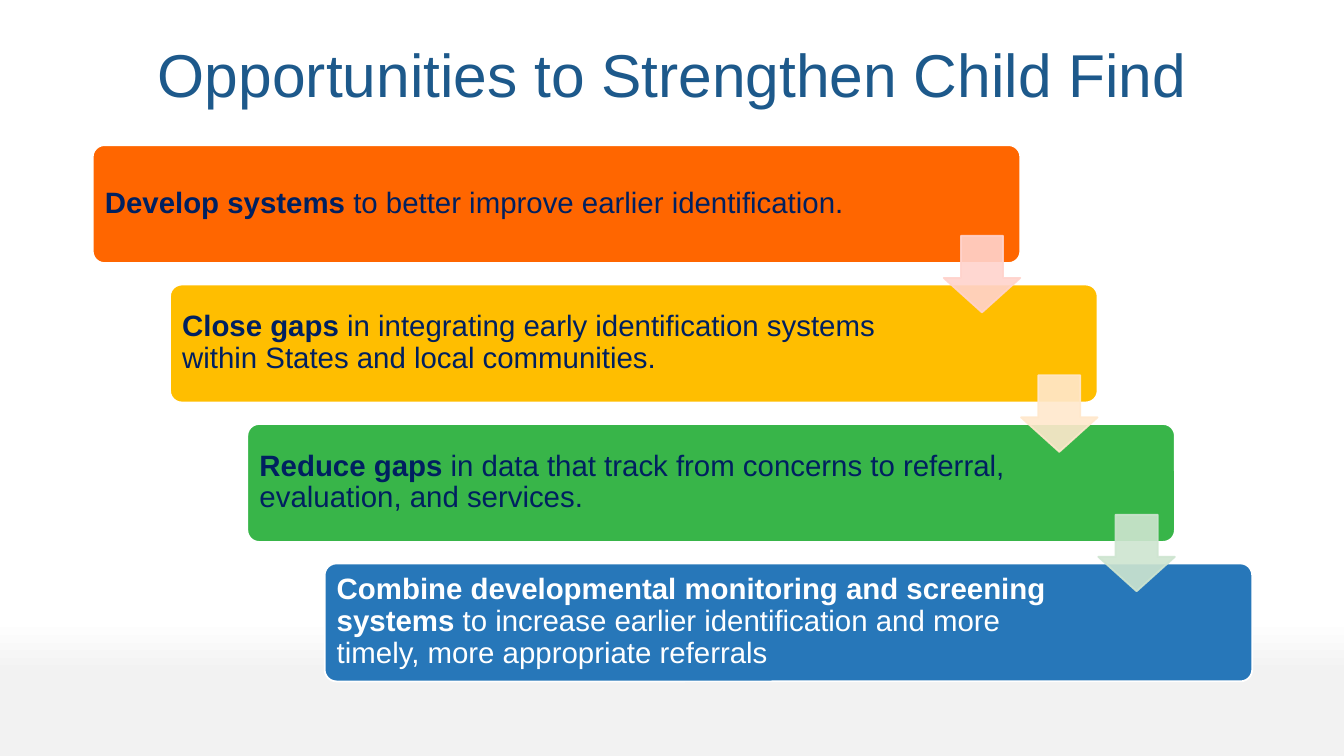
from lxml.etree import SubElement
from pptx import Presentation
from pptx.dml.color import RGBColor
from pptx.enum.shapes import MSO_SHAPE as Shape
from pptx.enum.text import MSO_ANCHOR as Anchor, PP_ALIGN as Align
from pptx.oxml.ns import qn
from pptx.util import Inches, Pt

FONT = "Arial"
NAVY, WHITE = "002060", "FFFFFF"
BOX_WIDTH, BOX_HEIGHT = 9.2, 1.17
FIRST_LEFT, FIRST_TOP = 0.92, 1.44
STEP_RIGHT, STEP_DOWN = 2.3 / 3, 4.15 / 3
ARROW_SIZE = 0.76

# Bold lead, remaining text, box colour, text colour, text width, arrow colour
STEPS = [
    ("Develop systems ", "to better improve earlier identification.",
     "FF6600", NAVY, 7.84, "FFD3CC"),
    ("Close gaps ",
     "in integrating early identification systems within States and local communities.",
     "FFBE00", NAVY, 7.6, "FFE8CC"),
    ("Reduce gaps ",
     "in data that track from concerns to referral, evaluation, and services.",
     "38B549", NAVY, 7.61, "CEE5D0"),
    ("Combine developmental monitoring and screening systems ",
     "to increase earlier identification and more timely, more appropriate referrals",
     "2777B9", WHITE, 7.6, None),
]


def color(value):
    return RGBColor.from_string(value)


def add_span(para, text, size=21, fill=NAVY, bold=False):
    span = para.add_run()
    span.text = text
    span.font.name = FONT
    span.font.size = Pt(size)
    span.font.bold = bold
    span.font.color.rgb = color(fill)


class Page:
    """Holds the current slide and draws its elements in one style."""

    def __init__(self, deck):
        self.slide = deck.slides.add_slide(deck.slide_layouts[6])

    def background(self, stops, angle):
        fill = self.slide.background.fill
        fill.gradient()
        fill.gradient_angle = angle
        for stop, (position, value) in zip(fill.gradient_stops, stops):
            stop.position = position
            stop.color.rgb = color(value)

    def text(self, left, top, width, height, spans, align=Align.LEFT,
             anchor=Anchor.MIDDLE, inset=0.09):
        box = self.slide.shapes.add_textbox(
            Inches(left), Inches(top), Inches(width), Inches(height))
        frame = box.text_frame
        frame.word_wrap = True
        frame.vertical_anchor = anchor
        frame.margin_left = frame.margin_right = Inches(inset)
        frame.margin_top = frame.margin_bottom = Inches(inset)
        para = frame.paragraphs[0]
        para.alignment = align
        para.line_spacing = 0.9
        for text, style in spans:
            add_span(para, text, **style)

    def shape(self, kind, left, top, width, height, fill, line, adjustments, opacity=None):
        shape = self.slide.shapes.add_shape(
            kind, Inches(left), Inches(top), Inches(width), Inches(height))
        shape.shadow.inherit = False
        for index, value in enumerate(adjustments):
            shape.adjustments[index] = value
        shape.fill.solid()
        shape.fill.fore_color.rgb = color(fill)
        shape.line.color.rgb = color(line)
        shape.line.width = Pt(1.25)
        if opacity is not None:
            for element in shape._element.spPr.iter(qn("a:srgbClr")):
                SubElement(element, qn("a:alpha"), val=str(opacity * 1000))

    def step_box(self, left, top, lead, rest, fill, ink, text_width):
        self.shape(Shape.ROUNDED_RECTANGLE, left, top, BOX_WIDTH, BOX_HEIGHT,
                   fill, WHITE, [0.1])
        self.text(left + 0.03, top + 0.03, text_width, 1.1,
                  [(lead, {"fill": ink, "bold": True}), (rest, {"fill": ink})])

    def step_arrow(self, left, top, fill):
        self.shape(Shape.DOWN_ARROW, left, top, ARROW_SIZE, ARROW_SIZE,
                   fill, fill, [0.55, 0.45], opacity=90)


def main():
    deck = Presentation()
    deck.slide_width, deck.slide_height = Inches(13.33), Inches(7.5)
    page = Page(deck)
    page.background([(0.82, WHITE), (0.89, "F2F2F2")], angle=270)
    page.text(0.92, 0.4, 11.5, 1.0,
              [("Opportunities to Strengthen Child Find", {"size": 43.2, "fill": "1D598B"})],
              align=Align.CENTER, anchor=Anchor.TOP, inset=0.05)

    corners = [(FIRST_LEFT + i * STEP_RIGHT, FIRST_TOP + i * STEP_DOWN)
               for i in range(len(STEPS))]
    for (left, top), (*content, _) in zip(corners, STEPS):
        page.step_box(left, top, *content)
    for (left, top), (*_, arrow_fill) in zip(corners, STEPS):
        if arrow_fill:
            page.step_arrow(left + BOX_WIDTH - ARROW_SIZE, top + 0.9, arrow_fill)

    deck.save("out.pptx")


if __name__ == "__main__":
    main()
